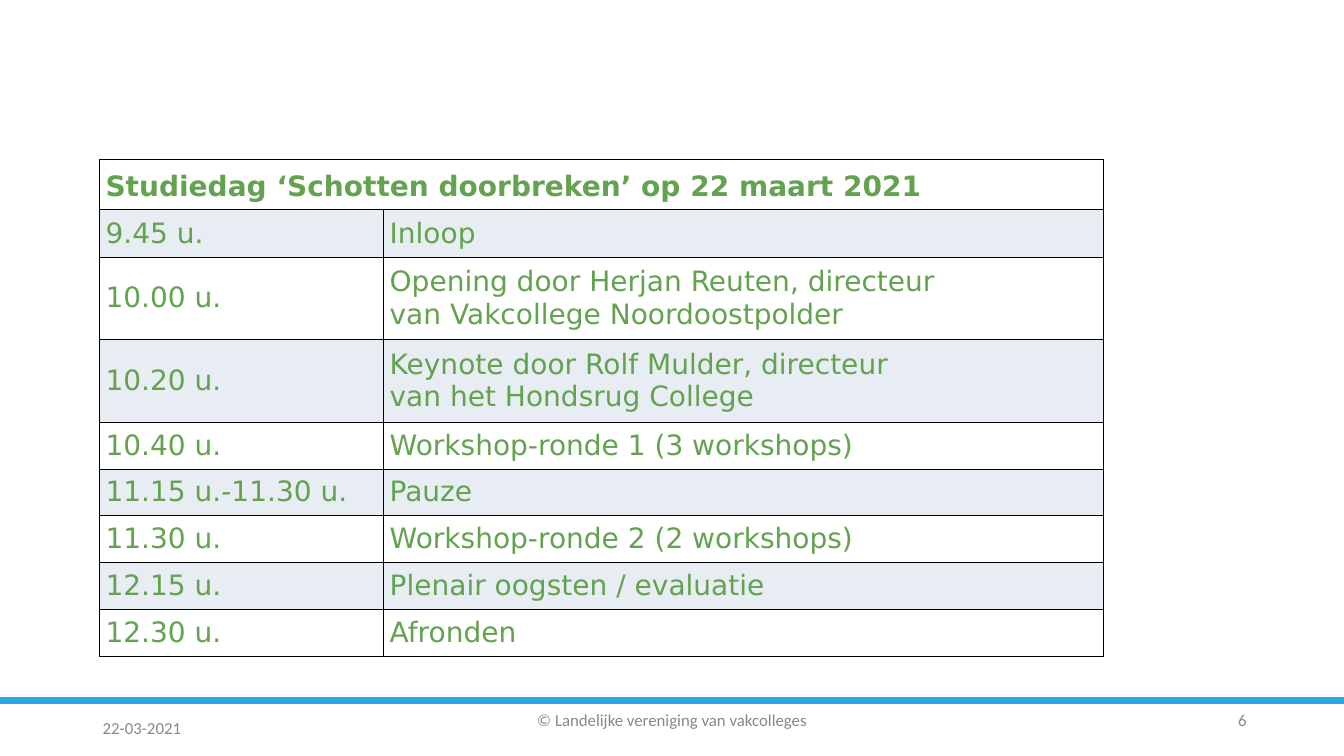
"""Build the programme slide of the study day."""
import dataclasses

import pptx
import pptx.dml.color
import pptx.enum.text
import pptx.oxml
import pptx.oxml.ns
import pptx.util
from pptx.util import Cm


@dataclasses.dataclass(frozen=True)
class Theme:
    """Hold the colours, fonts and sizes of the slide."""
    green: str = "63A24E"
    band: str = "E8ECF3"
    rule: str = "27A8E0"
    grey: str = "888888"
    border: str = "000000"
    table_font: str = "DejaVu Sans"
    footer_font: str = "Calibri"
    table_size: float = 20
    footer_size: float = 12
    rule_width: float = 4.5
    border_width: float = 0.5


THEME = Theme()
ALIGN = pptx.enum.text.PP_ALIGN
HEADING = "Studiedag ‘Schotten doorbreken’ op 22 maart 2021"
PROGRAMME = [
    ("9.45 u.", "Inloop", 1.19),
    ("10.00 u.", "Opening door Herjan Reuten, directeur\nvan Vakcollege Noordoostpolder", 2.08),
    ("10.20 u.", "Keynote door Rolf Mulder, directeur\nvan het Hondsrug College", 2.08),
    ("10.40 u.", "Workshop-ronde 1 (3 workshops)", 1.19),
    ("11.15 u.-11.30 u.", "Pauze", 1.14),
    ("11.30 u.", "Workshop-ronde 2 (2 workshops)", 1.19),
    ("12.15 u.", "Plenair oogsten / evaluatie", 1.19),
    ("12.30 u.", "Afronden", 1.19),
]


def rgb(value):
    """Turn a hex string into a colour."""
    return pptx.dml.color.RGBColor.from_string(value)


def write(frame, text, font, size, colour, align=ALIGN.LEFT, bold=False):
    """Fill a text frame and format its runs."""
    frame.text = text
    for paragraph in frame.paragraphs:
        paragraph.alignment = align
        for run in paragraph.runs:
            run.font.name = font
            run.font.size = pptx.util.Pt(size)
            run.font.bold = bold
            run.font.color.rgb = rgb(colour)


def set_margins(target, margin):
    """Give a cell or text frame the same margin on every side."""
    target.margin_left = target.margin_right = margin
    target.margin_top = target.margin_bottom = margin


def outline_cell(cell):
    """Draw a thin border on the four sides of a cell."""
    properties = cell._tc.get_or_add_tcPr()
    width = pptx.util.Pt(THEME.border_width)
    for side in ("lnL", "lnR", "lnT", "lnB"):
        properties.append(pptx.oxml.parse_xml(
            f'<a:{side} {pptx.oxml.ns.nsdecls("a")} w="{width}"><a:solidFill>'
            f'<a:srgbClr val="{THEME.border}"/></a:solidFill></a:{side}>'))


def style_cell(cell, banded):
    """Set the borders, fill, margins and anchor of a cell."""
    outline_cell(cell)
    if banded:
        cell.fill.solid()
        cell.fill.fore_color.rgb = rgb(THEME.band)
    else:
        cell.fill.background()
    set_margins(cell, Cm(0.15))
    cell.vertical_anchor = pptx.enum.text.MSO_ANCHOR.MIDDLE


def add_programme(slide):
    """Add the timetable with its heading row."""
    heights = [1.19] + [height for _, _, height in PROGRAMME]
    timetable = slide.shapes.add_table(
        len(heights), 2, Cm(2.51), Cm(4.01), Cm(25.3), Cm(sum(heights))).table
    timetable.first_row = timetable.horz_banding = False
    for column, width in zip(timetable.columns, (7.16, 18.14)):
        column.width = Cm(width)
    for index, height in enumerate(heights):
        timetable.rows[index].height = Cm(height)
        for cell in timetable.rows[index].cells:
            style_cell(cell, index % 2 == 1)
    heading = timetable.cell(0, 0)
    heading.merge(timetable.cell(0, 1))
    write(heading.text_frame, HEADING, THEME.table_font, THEME.table_size,
          THEME.green, bold=True)
    heading.text_frame.paragraphs[0].line_spacing = 1.15
    for index, (time, activity, _) in enumerate(PROGRAMME, start=1):
        for column, text in enumerate((time, activity)):
            write(timetable.cell(index, column).text_frame, text,
                  THEME.table_font, THEME.table_size, THEME.green)


def add_rule(slide, width):
    """Draw the coloured line above the footer."""
    rule = slide.shapes.add_connector(
        pptx.enum.shapes.MSO_CONNECTOR.STRAIGHT, 0, Cm(17.65), width, Cm(17.65))
    rule.line.color.rgb = rgb(THEME.rule)
    rule.line.width = pptx.util.Pt(THEME.rule_width)
    rule._element.spPr.append(pptx.oxml.parse_xml(
        f'<a:effectLst {pptx.oxml.ns.nsdecls("a")}/>'))


def add_footer(slide, text, left, top, width, align, wrap=True):
    """Add one footer text."""
    frame = slide.shapes.add_textbox(Cm(left), Cm(top), Cm(width), Cm(0.74)).text_frame
    set_margins(frame, Cm(0.13))
    frame.word_wrap = wrap
    frame.auto_size = pptx.enum.text.MSO_AUTO_SIZE.SHAPE_TO_FIT_TEXT
    frame.vertical_anchor = pptx.enum.text.MSO_ANCHOR.MIDDLE
    write(frame, text, THEME.footer_font, THEME.footer_size, THEME.grey, align)


def main():
    """Build and save the slide."""
    deck = pptx.Presentation()
    deck.slide_width, deck.slide_height = Cm(33.87), Cm(19.05)
    slide = deck.slides.add_slide(deck.slide_layouts[6])
    add_rule(slide, deck.slide_width)
    add_footer(slide, "© Landelijke vereniging van vakcolleges", 11.35, 17.78, 11.18, ALIGN.CENTER)
    add_footer(slide, "22-03-2021", 2.46, 17.96, 7.37, ALIGN.LEFT)
    add_footer(slide, "6", 31.04, 17.78, 0.51, ALIGN.RIGHT, wrap=False)
    add_programme(slide)
    deck.save("out.pptx")


if __name__ == "__main__":
    main()
